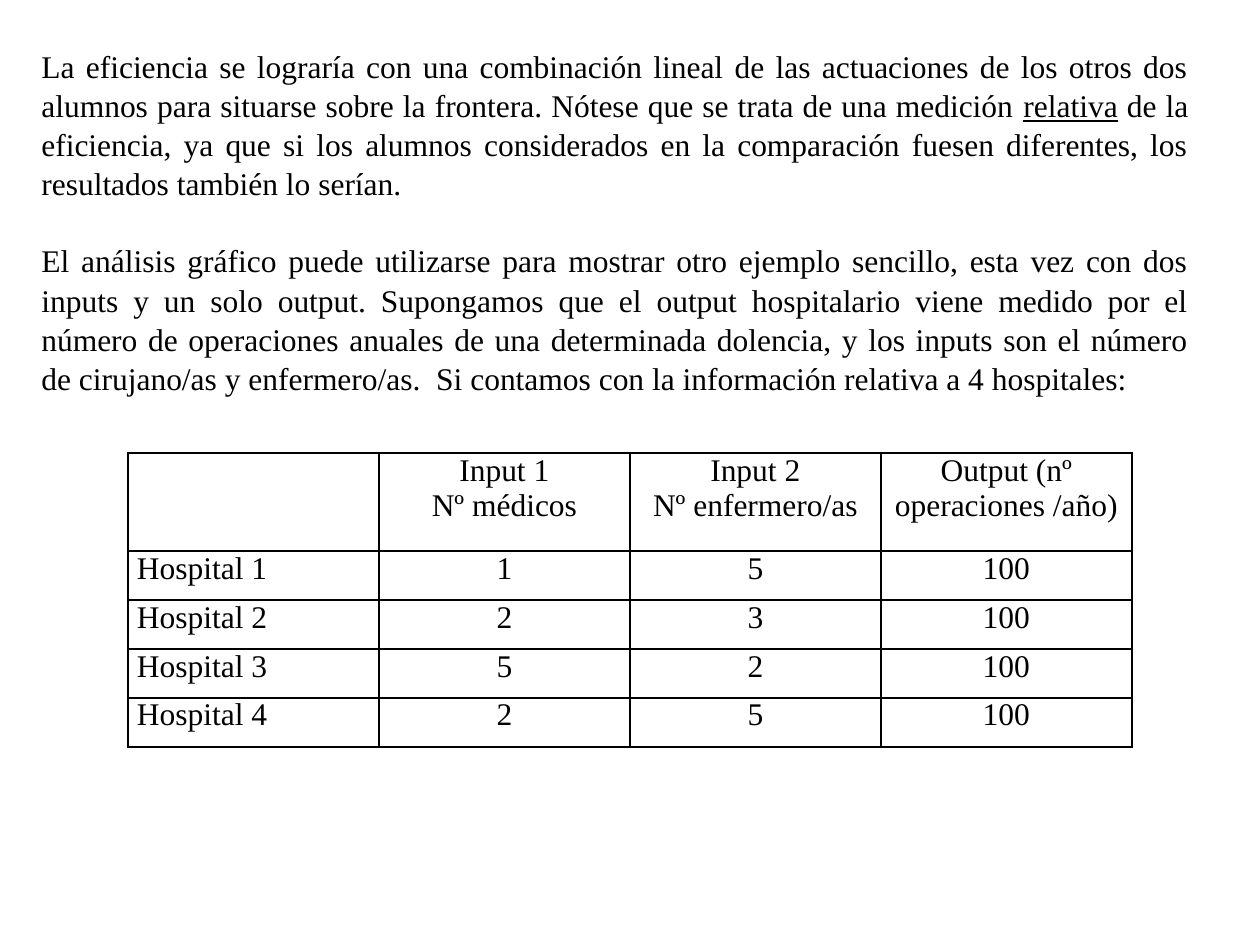
from lxml.etree import SubElement
from pptx import Presentation
from pptx.dml.color import RGBColor
from pptx.enum.text import PP_ALIGN
from pptx.oxml.ns import qn
from pptx.util import Pt

PX = 914400 // 126
BLACK = RGBColor(0, 0, 0)
FONT = "Times New Roman"
COLUMN_WIDTH = 251
ROW_HEIGHT = 49
PARAGRAPHS = [
    [
        ("La eficiencia se lograría con una combinación lineal de las actuaciones de los "
         "otros dos alumnos para situarse sobre la frontera. Nótese que se trata de una "
         "medición ", False),
        ("relativa", True),
        (" de la eficiencia, ya que si los alumnos considerados en la comparación fuesen "
         "diferentes, los resultados también lo serían.", False),
    ],
    [
        ("El análisis gráfico puede utilizarse para mostrar otro ejemplo sencillo, esta vez "
         "con dos inputs y un solo output. Supongamos que el output hospitalario viene medido "
         "por el número de operaciones anuales de una determinada dolencia, y los inputs son "
         "el número de cirujano/as y enfermero/as.  Si contamos con la información relativa "
         "a 4 hospitales:", False),
    ],
]
HOSPITAL_ROWS = [
    ["", "Input 1\nNº médicos", "Input 2\nNº enfermero/as", "Output (nº operaciones /año)"],
    ["Hospital 1", "1", "5", "100"],
    ["Hospital 2", "2", "3", "100"],
    ["Hospital 3", "5", "2", "100"],
    ["Hospital 4", "2", "5", "100"],
]


def format_paragraph(para, alignment):
    """Apply the common font and an alignment to a paragraph."""
    para.alignment = alignment
    para.font.name = FONT
    para.font.size = Pt(18)
    para.font.color.rgb = BLACK


def add_body(page, left, top, width, height):
    """Add the justified explanation with its underlined word."""
    frame = page.shapes.add_textbox(left * PX, top * PX, width * PX, height * PX).text_frame
    frame.word_wrap = True
    for index, spans in enumerate(PARAGRAPHS):
        para = frame.add_paragraph() if index else frame.paragraphs[0]
        format_paragraph(para, PP_ALIGN.JUSTIFY)
        para.line_spacing = 1.04
        para.space_before = Pt(21.5 if index else 0)
        for text, underlined in spans:
            span = para.add_run()
            span.text = text
            if underlined:
                span.font.underline = True


def add_borders(cell):
    """Draw a thin black line on each side of a cell."""
    properties = cell._tc.get_or_add_tcPr()
    for position, side in enumerate(("a:lnL", "a:lnR", "a:lnT", "a:lnB")):
        line = properties.makeelement(qn(side), {"w": str(Pt(1))})
        properties.insert(position, line)
        fill = SubElement(line, qn("a:solidFill"))
        SubElement(fill, qn("a:srgbClr"), val=str(BLACK))


def fill_cell(cell, text, alignment):
    """Write and format one table cell."""
    cell.margin_left = cell.margin_right = 9 * PX
    cell.margin_top = cell.margin_bottom = 0
    cell.fill.background()
    cell.text = text
    for para in cell.text_frame.paragraphs:
        format_paragraph(para, alignment)
    add_borders(cell)


def add_hospital_table(page, left, top):
    """Add the table of hospital inputs and output."""
    rows, columns = len(HOSPITAL_ROWS), len(HOSPITAL_ROWS[0])
    table = page.shapes.add_table(
        rows, columns, left * PX, top * PX,
        columns * COLUMN_WIDTH * PX, (rows + 1) * ROW_HEIGHT * PX,
    ).table
    for column in table.columns:
        column.width = COLUMN_WIDTH * PX
    for row_index, values in enumerate(HOSPITAL_ROWS):
        table.rows[row_index].height = ROW_HEIGHT * PX * (1 if row_index else 2)
        for column_index, text in enumerate(values):
            alignment = PP_ALIGN.CENTER if column_index else PP_ALIGN.JUSTIFY
            fill_cell(table.cell(row_index, column_index), text, alignment)


def main():
    """Build and save the slide."""
    deck = Presentation()
    deck.slide_width, deck.slide_height = 1260 * PX, 945 * PX
    page = deck.slides.add_slide(deck.slide_layouts[6])
    add_body(page, 29, 39, 1172, 432)
    add_hospital_table(page, 128, 453)
    deck.save("out.pptx")


if __name__ == "__main__":
    main()
